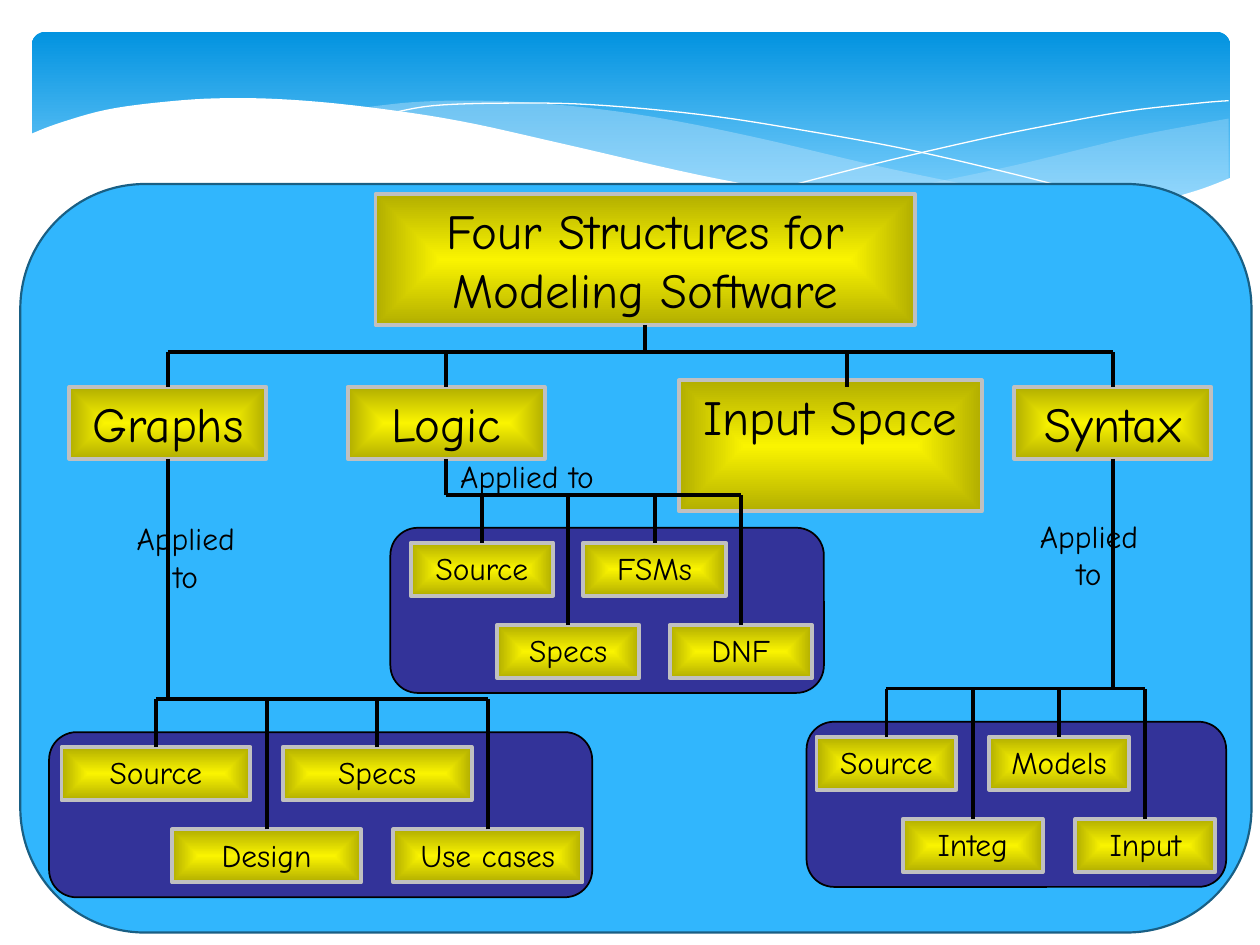
from dataclasses import dataclass

from lxml.etree import SubElement
from pptx import Presentation
from pptx.dml.color import RGBColor
from pptx.enum.shapes import MSO_CONNECTOR, MSO_SHAPE
from pptx.enum.text import MSO_ANCHOR, MSO_AUTO_SIZE, PP_ALIGN
from pptx.oxml.ns import qn
from pptx.util import Cm, Pt


@dataclass(frozen=True)
class Theme:
    font: str = "Comic Neue"
    large: int = 28
    small: int = 18
    ink: str = "000000"
    white: str = "FFFFFF"
    sky_top: str = "0293E0"
    sky_bottom: str = "83D3FE"
    wave: str = "C6E7FC"
    panel: str = "31B6FD"
    panel_edge: str = "195F84"
    family: str = "333399"
    gold: str = "FAF400"
    silver: str = "C0C0C0"


THEME = Theme()
BACK_WAVE_TOP = [(7.26, 2.18), (8.33, 2.06), (9.65, 2.03), (11.23, 2.11), (13.06, 2.34),
                 (15.19, 2.76), (17.93, 3.4), (20.5, 3.91), (22.68, 4.24)]
BACK_WAVE_BOTTOM = [(20.5, 4.39), (18.67, 4.29), (16.51, 4.01), (14.38, 3.63),
                    (11.4, 2.95), (9.73, 2.57), (8.2, 2.29), (7.26, 2.18)]
RIGHT_WAVE_TOP = [(24.77, 2.39), (23.01, 2.72), (21.87, 2.99), (20.43, 3.34),
                  (18.52, 3.74), (16.79, 4.06)]
RIGHT_WAVE_BOTTOM = [(18.59, 4.24), (20.12, 4.37), (21.21, 4.37), (22.38, 4.27),
                     (23.39, 4.06), (24.1, 3.86), (24.77, 3.6)]
FALLING_LINE = [(7.85, 2.29), (8.74, 2.13), (10.19, 2.08), (11.91, 2.11), (14.12, 2.31),
                (16.15, 2.62), (18.47, 3.05), (21.11, 3.68), (23.04, 4.22)]
RISING_LINE = [(15.57, 3.84), (17.65, 3.3), (19.71, 2.82), (21.23, 2.51), (22.73, 2.24),
               (24.16, 2.08), (24.77, 2.03)]
FRONT_WAVE = [(0.58, 2.72), (1.17, 2.49), (2.16, 2.21), (3.35, 2.05), (4.5, 1.98),
              (5.84, 2.01), (7.42, 2.16), (9.27, 2.44), (11.35, 2.9), (14.1, 3.53),
              (16.46, 3.96), (18.44, 4.24), (20.14, 4.34), (21.59, 4.32), (23.11, 4.11),
              (24.13, 3.84), (24.82, 3.58)]
FRONT_CORNERS = [(24.82, 5.69), (0.58, 5.69)]


def rgb(value):
    return RGBColor.from_string(value)


def smooth(points, steps=6):
    padded = [points[0], *points, points[-1]]
    curve = []
    for a, b, c, d in zip(padded, padded[1:], padded[2:], padded[3:]):
        for step in range(steps):
            t = step / steps
            curve.append(tuple(
                q + t / 2 * (r - p + t * (2 * p - 5 * q + 4 * r - s + t * (3 * (q - r) + s - p)))
                for p, q, r, s in zip(a, b, c, d)))
    return curve + [points[-1]]


def add_outline(page, points, fill=None, opacity=100):
    start, *rest = [(Cm(x), Cm(y)) for x, y in points]
    builder = page.shapes.build_freeform(*start, scale=1.0)
    builder.add_line_segments(rest, close=fill is not None)
    outline = builder.convert_to_shape()
    outline.shadow.inherit = False
    if fill is None:
        outline.fill.background()
        outline.line.color.rgb = rgb(THEME.white)
        outline.line.width = Pt(0)
        return
    outline.fill.solid()
    outline.fill.fore_color.rgb = rgb(fill)
    outline.line.fill.background()
    if opacity < 100:
        color = outline.fill._xPr.find(".//" + qn("a:srgbClr"))
        SubElement(color, qn("a:alpha"), val=str(opacity * 1000))


def add_rounded(page, box, fill, edge, width):
    shape = page.shapes.add_shape(MSO_SHAPE.ROUNDED_RECTANGLE, *map(Cm, box))
    shape.shadow.inherit = False
    shape.fill.solid()
    shape.fill.fore_color.rgb = rgb(fill)
    shape.line.color.rgb = rgb(edge)
    shape.line.width = Pt(width)
    return shape


def set_gradient(shape, first, last, end):
    shape.fill.gradient()
    for stop, color, position in zip(shape.fill.gradient_stops, (first, last), (0, end)):
        stop.color.rgb = rgb(color)
        stop.position = position


def set_text(shape, text, size):
    frame = shape.text_frame
    frame.text = text
    frame.word_wrap = True
    frame.auto_size = MSO_AUTO_SIZE.NONE
    frame.vertical_anchor = MSO_ANCHOR.TOP
    for para in frame.paragraphs:
        para.alignment = PP_ALIGN.CENTER
        for span in para.runs:
            span.font.name = THEME.font
            span.font.size = Pt(size)
            span.font.color.rgb = rgb(THEME.ink)


def style_gold(shape, text, size):
    set_gradient(shape, THEME.gold, THEME.gold, 1)
    gradient = shape.fill._xPr.find(qn("a:gradFill"))
    edge_color = gradient.findall(".//" + qn("a:srgbClr"))[-1]
    SubElement(edge_color, qn("a:shade"), val="46275")
    gradient.remove(gradient.find(qn("a:lin")))
    center = SubElement(gradient, qn("a:path"), {"path": "shape"})
    SubElement(center, qn("a:fillToRect"), {side: "50000" for side in "ltrb"})
    shape.line.color.rgb = rgb(THEME.silver)
    shape.line.width = Pt(2.25)
    set_text(shape, text, size)


def add_gold(page, box, text, size):
    shape = page.shapes.add_shape(MSO_SHAPE.RECTANGLE, *map(Cm, box))
    shape.shadow.inherit = False
    style_gold(shape, text, size)
    return shape


def add_line(page, start, end):
    line = page.shapes.add_connector(MSO_CONNECTOR.STRAIGHT, *start, *end)
    line.line.color.rgb = rgb(THEME.ink)
    line.line.width = Pt(2.25)
    SubElement(line.line._ln.getparent(), qn("a:effectLst"))
    return line


def middle(shape):
    return shape.left + shape.width // 2


def add_branch(page, parent, children, level):
    centers = [middle(shape) for shape in (parent, *children)]
    add_line(page, (min(centers), level), (max(centers), level))
    stem = add_line(page, (centers[0], parent.top + parent.height), (centers[0], level))
    stem.begin_connect(parent, 2)
    for child, center in zip(children, centers[1:]):
        drop = add_line(page, (center, child.top), (center, level))
        drop.begin_connect(child, 0)


def add_header(page, box):
    sky = page.shapes.add_shape(MSO_SHAPE.ROUNDED_RECTANGLE, *map(Cm, box))
    sky.shadow.inherit = False
    sky.adjustments[0] = 0.07
    set_gradient(sky, THEME.sky_top, THEME.sky_bottom, 0.9)
    sky.fill.gradient_angle = 270
    sky.line.fill.background()
    add_outline(page, smooth(RIGHT_WAVE_TOP) + smooth(RIGHT_WAVE_BOTTOM), THEME.wave, 29)
    add_outline(page, smooth(BACK_WAVE_TOP) + smooth(BACK_WAVE_BOTTOM), THEME.wave, 40)
    add_outline(page, smooth(FALLING_LINE))
    add_outline(page, smooth(RISING_LINE))
    add_outline(page, smooth(FRONT_WAVE) + FRONT_CORNERS, THEME.white)


def add_topics(page, box):
    left, top, width, height = box
    title = page.shapes.title
    title.left, title.top, title.width, title.height = map(Cm, (left + 7.16, top + 0.2, 10.87, 2.64))
    style_gold(title, "Four Structures for Modeling Software", THEME.large)
    title._element.getparent().append(title._element)
    graphs, logic, syntax = [
        add_gold(page, (left + offset, top + 4.09, 3.97, 1.45), name, THEME.large)
        for name, offset in (("Graphs", 0.99), ("Logic", 6.6), ("Syntax", 20.04))]
    add_gold(page, (left + 13.28, top + 3.96, 6.1, 2.64), "Input Space", THEME.large)
    level = Cm(top + 3.38)
    add_branch(page, title, (graphs, logic, syntax), level)
    add_line(page, (Cm(left + 16.66), level), (Cm(left + 16.66), Cm(top + 4.09)))
    return graphs, logic, syntax


def add_family(page, box, topic, names, inset, step, leaf_width, label_box):
    left, top, width, height = box
    add_rounded(page, box, THEME.family, THEME.ink, 1)
    leaves = [
        add_gold(page, (left + inset + index * step, top + (0.3, 1.96)[index % 2], leaf_width, 1.07),
                 name, THEME.small)
        for index, name in enumerate(names)]
    add_branch(page, topic, leaves, Cm(top - 0.67))
    label = page.shapes.add_textbox(*map(Cm, label_box))
    set_text(label, "Applied to", THEME.small)


def main():
    deck = Presentation()
    deck.slide_width, deck.slide_height = Cm(25.4), Cm(19.05)
    page = deck.slides.add_slide(deck.slide_layouts[5])
    add_header(page, (0.64, 0.64, 24.16, 3.96))
    panel = (0.41, 3.71, 24.82, 15.09)
    add_rounded(page, panel, THEME.panel, THEME.panel_edge, 1.25)
    graphs, logic, syntax = add_topics(page, panel)
    add_family(page, (0.99, 14.76, 10.95, 3.33), graphs, ("Source", "Design", "Specs", "Use cases"),
               0.25, 2.23, 3.81, (2.26, 10.34, 2.97, 1.8))
    add_family(page, (7.87, 10.64, 8.74, 3.33), logic, ("Source", "Specs", "FSMs", "DNF"),
               0.41, 1.74, 2.87, (8.53, 9.09, 4.19, 1.02))
    add_family(page, (16.26, 14.55, 8.46, 3.33), syntax, ("Source", "Integ", "Models", "Input"),
               0.2, 1.74, 2.82, (20.47, 10.29, 2.97, 1.8))
    deck.save("out.pptx")


if __name__ == "__main__":
    main()
